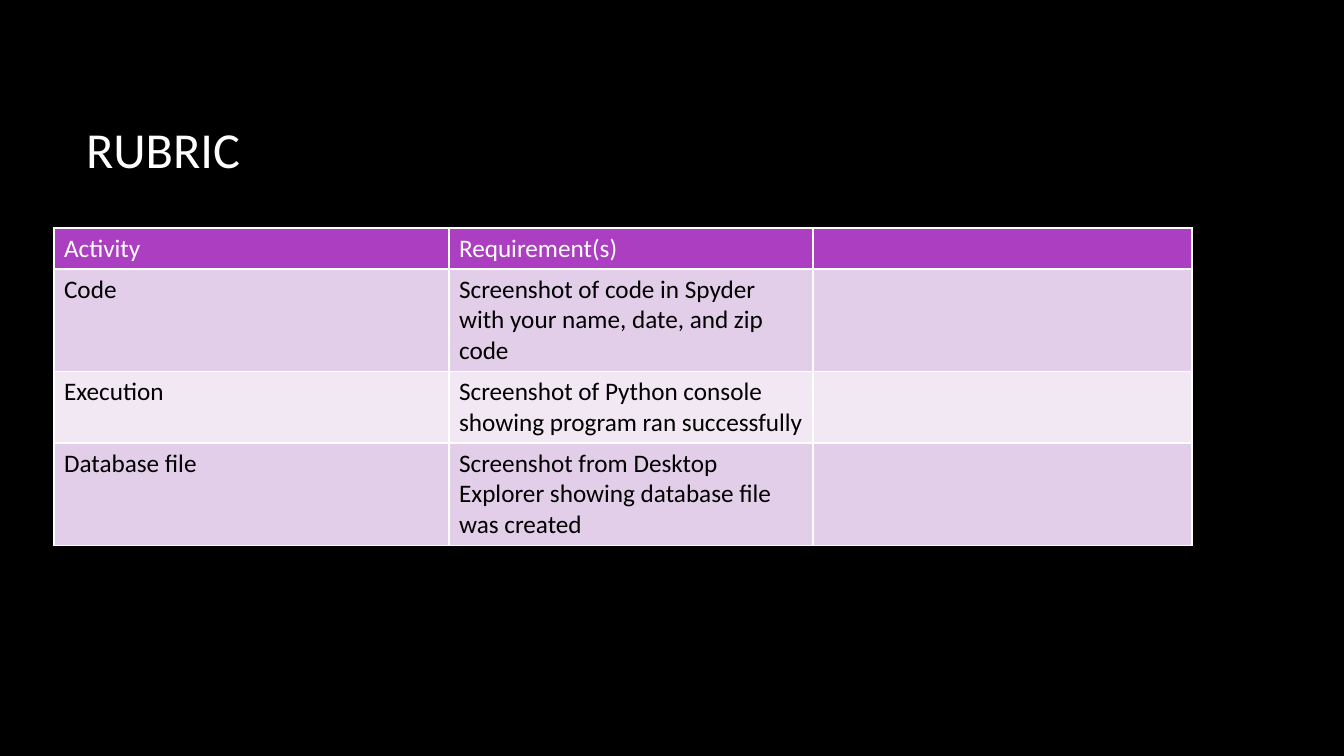
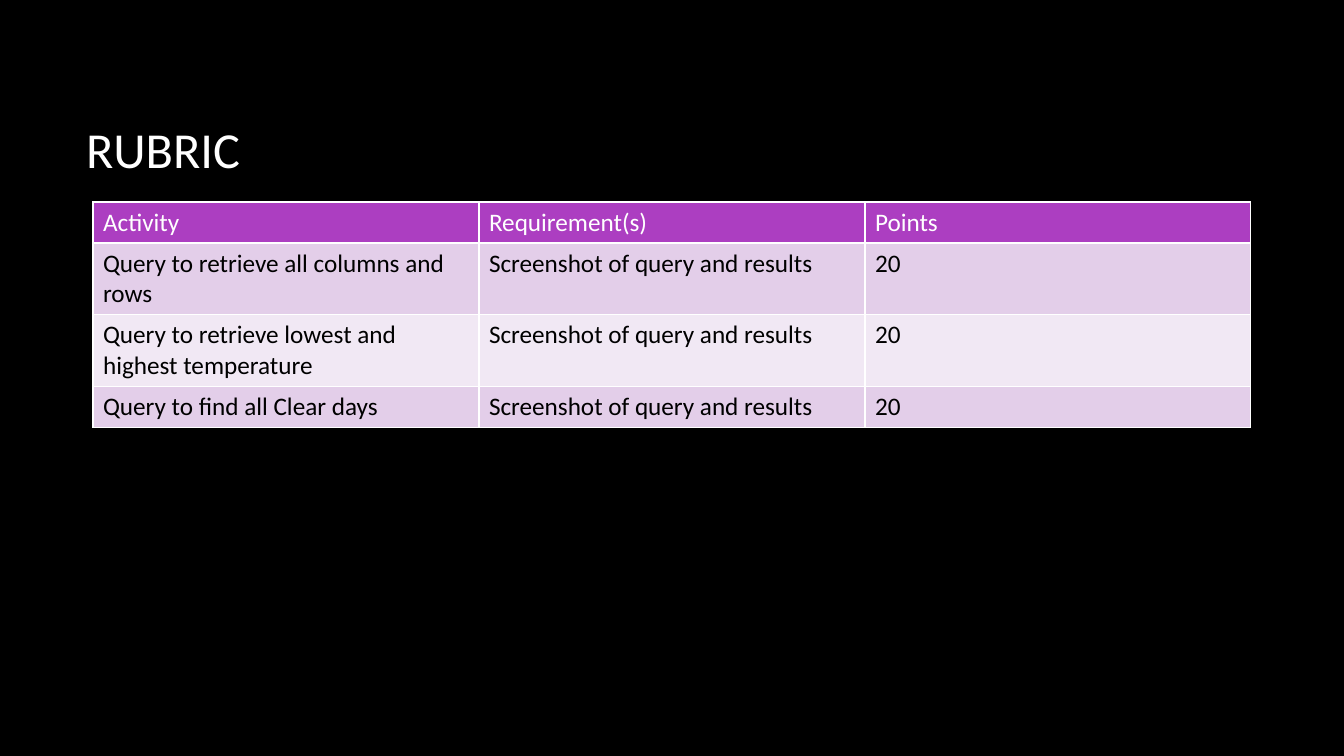
from dataclasses import dataclass

from lxml import etree
from pptx import Presentation
from pptx.dml.color import RGBColor
from pptx.enum.text import MSO_ANCHOR, PP_ALIGN
from pptx.oxml.ns import qn
from pptx.util import Pt

LEFT = PP_ALIGN.LEFT
MIDDLE = MSO_ANCHOR.MIDDLE
EMU_PER_PX = 914400 / 100.8
TITLE_ONLY = 5


@dataclass(frozen=True)
class Theme:
    font: str = "Calibri"
    background: str = "000000"
    light: str = "FFFFFF"
    dark: str = "000000"
    header: str = "AC3EC1"
    bands: tuple = ("E3CEE9", "F1E8F4")
    title_size: int = 36
    table_size: int = 18
    border_width: int = 1


def px(n):
    return round(n * EMU_PER_PX)


def set_attrs(obj, values):
    for name, value in values.items():
        setattr(obj, name, value)


class Deck:
    def __init__(self, theme):
        self.theme = theme
        self.prs = Presentation()
        set_attrs(self.prs, {"slide_width": px(1344), "slide_height": px(756)})
        fill = self.prs.slide_master.background.fill
        fill.solid()
        fill.fore_color.rgb = RGBColor.from_string(theme.background)
        self.slide = None

    def new_slide(self):
        self.slide = self.prs.slides.add_slide(self.prs.slide_layouts[TITLE_ONLY])

    def add_text(self, tf, text, size, color):
        p = tf.paragraphs[0]
        p.alignment = LEFT
        if text:
            r = p.add_run()
            r.text = text
            set_attrs(r.font, {"name": self.theme.font, "size": Pt(size), "bold": False})
            r.font.color.rgb = RGBColor.from_string(color)

    def title(self, text):
        sp = self.slide.shapes.title
        set_attrs(sp, {"left": px(76), "top": px(68), "width": px(1117), "height": px(160)})
        set_attrs(sp.text_frame, {"vertical_anchor": MIDDLE, "word_wrap": True})
        self.add_text(sp.text_frame, text, self.theme.title_size, self.theme.light)

    def border(self, cell):
        tc_pr = cell._tc.get_or_add_tcPr()
        for side in ("lnL", "lnR", "lnT", "lnB"):
            ln = etree.SubElement(tc_pr, qn(f"a:{side}"), w=str(Pt(self.theme.border_width)))
            fill = etree.SubElement(ln, qn("a:solidFill"))
            etree.SubElement(fill, qn("a:srgbClr"), val=self.theme.light)

    def table(self, left, top, col_widths, rows, row_height=41):
        """Add a table with a header row and alternating body bands."""
        theme = self.theme
        table = self.slide.shapes.add_table(
            len(rows), len(col_widths), px(left), px(top),
            px(sum(col_widths)), px(row_height * len(rows))).table
        for column, width in zip(table.columns, col_widths):
            column.width = px(width)
        for i, row in enumerate(rows):
            table.rows[i].height = px(row_height)
            band = theme.bands[(i - 1) % len(theme.bands)] if i else theme.header
            color = theme.dark if i else theme.light
            for j, text in enumerate(row):
                cell = table.cell(i, j)
                self.border(cell)
                cell.fill.solid()
                cell.fill.fore_color.rgb = RGBColor.from_string(band)
                self.add_text(cell.text_frame, text, theme.table_size, color)


def main():
    deck = Deck(Theme())

    deck.new_slide()
    deck.title("RUBRIC")
    deck.table(54, 228, (395, 364, 379), [
        ("Activity", "Requirement(s)", ""),
        ("Code", "Screenshot of code in Spyder with your name, date, and zip code", ""),
        ("Execution", "Screenshot of Python console showing program ran successfully", ""),
        ("Database file", "Screenshot from Desktop Explorer showing database file was created", ""),
    ])

    deck.new_slide()
    deck.title("RUBRIC")
    queries = ("Query to retrieve all columns and rows",
               "Query to retrieve lowest and highest temperature",
               "Query to find all Clear days")
    deck.table(93, 202, (386, 386, 386), [
        ("Activity", "Requirement(s)", "Points"),
        *((query, "Screenshot of query and results", "20") for query in queries),
    ])

    deck.prs.save("out.pptx")


if __name__ == "__main__":
    main()
